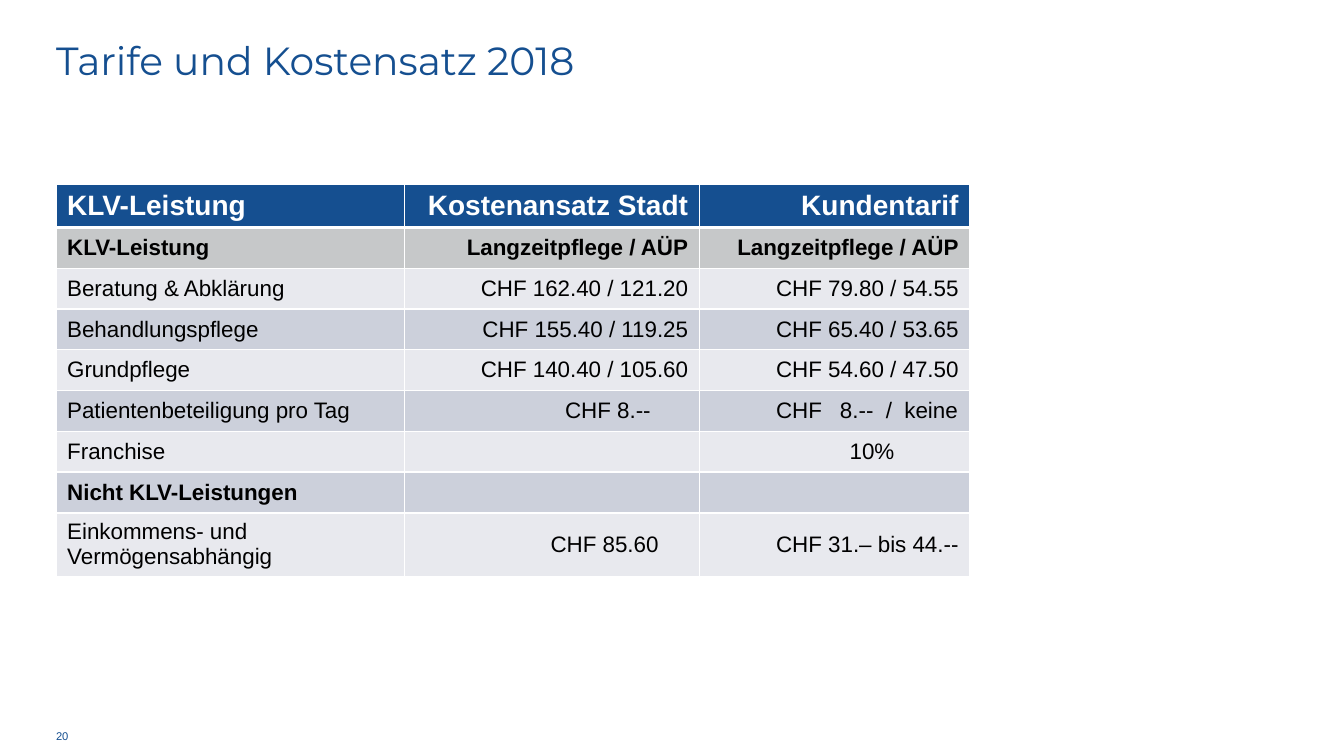
"""Build the slide on tariffs and cost rates for 2018."""
from dataclasses import dataclass

import pptx
import pptx.dml.color
import pptx.enum.text
import pptx.oxml
import pptx.oxml.ns
import pptx.util

WIDE, HIGH = 13.33, 7.5
COLS, ROWS = 24, 18
BLUE, WHITE, BLACK = "154F90", "FFFFFF", "000000"
GREY, PALE, DARK = "C6C8C9", "E8E9EE", "CCD0DB"
PAD = 0.2
ALIGN = pptx.enum.text.PP_ALIGN
ANCHOR = pptx.enum.text.MSO_ANCHOR


@dataclass
class Cell:
    """Text of a cell with its side pads in grid columns and its tab stops."""
    text: str = ""
    align: int = ALIGN.RIGHT
    left: float = PAD
    right: float = PAD
    tabs: tuple[float, ...] = ()


@dataclass
class Row:
    """One table row: label, two values and the look they share."""
    label: str
    city: Cell
    client: Cell
    fill: str
    bold: bool = False
    size: int = 16
    ink: str = BLACK
    high: float = 0.97
    top: int = 1
    base: int = 1


TABLE = [
    Row("KLV-Leistung", Cell("Kostenansatz Stadt"), Cell("Kundentarif"),
        BLUE, True, 20, WHITE, 1.03, base=3),
    Row("KLV-Leistung", Cell("Langzeitpflege / AÜP"),
        Cell("Langzeitpflege / AÜP"), GREY, True, top=3),
    Row("Beratung & Abklärung", Cell("CHF 162.40 / 121.20"),
        Cell("CHF 79.80 / 54.55"), PALE),
    Row("Behandlungspflege", Cell("CHF 155.40 / 119.25"),
        Cell("CHF 65.40 / 53.65"), DARK),
    Row("Grundpflege", Cell("CHF 140.40 / 105.60"),
        Cell("CHF 54.60 / 47.50"), PALE),
    Row("Patientenbeteiligung pro Tag", Cell("CHF 8.--", right=0.87),
        Cell("CHF\t8.--\t/\tkeine", ALIGN.LEFT, 1.37, 0,
             (1.14, 1.96, 2.29)), DARK),
    Row("Franchise", Cell(), Cell("10%", right=1.35), PALE),
    Row("Nicht KLV-Leistungen", Cell(), Cell(), DARK, True),
    Row("Einkommens- und Vermögensabhängig", Cell("CHF 85.60", right=0.73),
        Cell("CHF 31.– bis 44.--"), PALE, high=1.51),
]


def across(cols: float) -> int:
    """Turn grid columns into a length."""
    return pptx.util.Inches(WIDE / COLS * cols)


def down(rows: float) -> int:
    """Turn grid rows into a length."""
    return pptx.util.Inches(HIGH / ROWS * rows)


def tint(code: str) -> pptx.dml.color.RGBColor:
    """Turn a hex string into a colour."""
    return pptx.dml.color.RGBColor.from_string(code)


def style(para, size: int, ink: str, face: str = "Arial",
          bold: bool = False) -> None:
    """Format each run of a paragraph."""
    for run in para.runs:
        run.font.size = pptx.util.Pt(size)
        run.font.name = face
        run.font.bold = bold
        run.font.color.rgb = tint(ink)


def border(cell, top: int, base: int) -> None:
    """Rule the four sides of a cell in white."""
    space = pptx.oxml.ns.nsdecls("a")
    for side, width in (("L", 1), ("R", 1), ("T", top), ("B", base)):
        cell._tc.get_or_add_tcPr().append(pptx.oxml.parse_xml(
            f'<a:ln{side} {space} w="{pptx.util.Pt(width)}"><a:solidFill>'
            f'<a:srgbClr val="{WHITE}"/></a:solidFill></a:ln{side}>'))


def stops(para, tabs: tuple[float, ...]) -> None:
    """Add left tab stops to a paragraph."""
    marks = "".join(f'<a:tab pos="{across(tab)}" algn="l"/>' for tab in tabs)
    para._p.get_or_add_pPr().append(pptx.oxml.parse_xml(
        f'<a:tabLst {pptx.oxml.ns.nsdecls("a")}>{marks}</a:tabLst>'))


def fill_cell(cell, item: Cell, row: Row) -> None:
    """Write and format one table cell."""
    border(cell, row.top, row.base)
    cell.fill.solid()
    cell.fill.fore_color.rgb = tint(row.fill)
    cell.vertical_anchor = ANCHOR.MIDDLE
    cell.margin_left, cell.margin_right = across(item.left), across(item.right)
    para = cell.text_frame.paragraphs[0]
    para.text = item.text
    if item.tabs:
        stops(para, item.tabs)
    para.alignment = item.align
    style(para, row.size, row.ink, bold=row.bold)


def add_title(slide) -> None:
    """Place the title."""
    title = slide.shapes.title
    title.left, title.top = across(1), down(1)
    title.width, title.height = across(21.7), down(2.23)
    frame = title.text_frame
    frame.text = "Tarife und Kostensatz 2018"
    frame.auto_size = pptx.enum.text.MSO_AUTO_SIZE.NONE
    frame.vertical_anchor = ANCHOR.TOP
    frame.margin_left = frame.margin_right = 0
    frame.margin_top = frame.margin_bottom = 0
    para = frame.paragraphs[0]
    para.alignment = ALIGN.LEFT
    para.line_spacing = 0.9
    style(para, 28, BLUE, "Montserrat")


def add_rates(slide) -> None:
    """Draw the table of rates."""
    widths = (6.23, 5.26, 4.83)
    total = sum(row.high for row in TABLE)
    table = slide.shapes.add_table(
        len(TABLE), len(widths), across(1), down(4.39),
        across(sum(widths)), down(total)).table
    for col, width in zip(table.columns, widths):
        col.width = across(width)
    for line, row in zip(table.rows, TABLE):
        line.height = down(row.high)
        items = (Cell(row.label, ALIGN.LEFT), row.city, row.client)
        for cell, item in zip(line.cells, items):
            fill_cell(cell, item, row)


def add_number(slide) -> None:
    """Place the page number."""
    frame = slide.shapes.add_textbox(
        across(1), down(17.23), across(1.2), down(0.58)).text_frame
    frame.text = "20"
    frame.word_wrap = True
    frame.vertical_anchor = ANCHOR.MIDDLE
    frame.margin_left = frame.margin_right = 0
    style(frame.paragraphs[0], 8, BLUE)


def main() -> None:
    """Build and save the deck."""
    deck = pptx.Presentation()
    deck.slide_width = pptx.util.Inches(WIDE)
    deck.slide_height = pptx.util.Inches(HIGH)
    slide = deck.slides.add_slide(deck.slide_layouts[5])
    add_title(slide)
    add_rates(slide)
    add_number(slide)
    deck.save("out.pptx")


if __name__ == "__main__":
    main()
